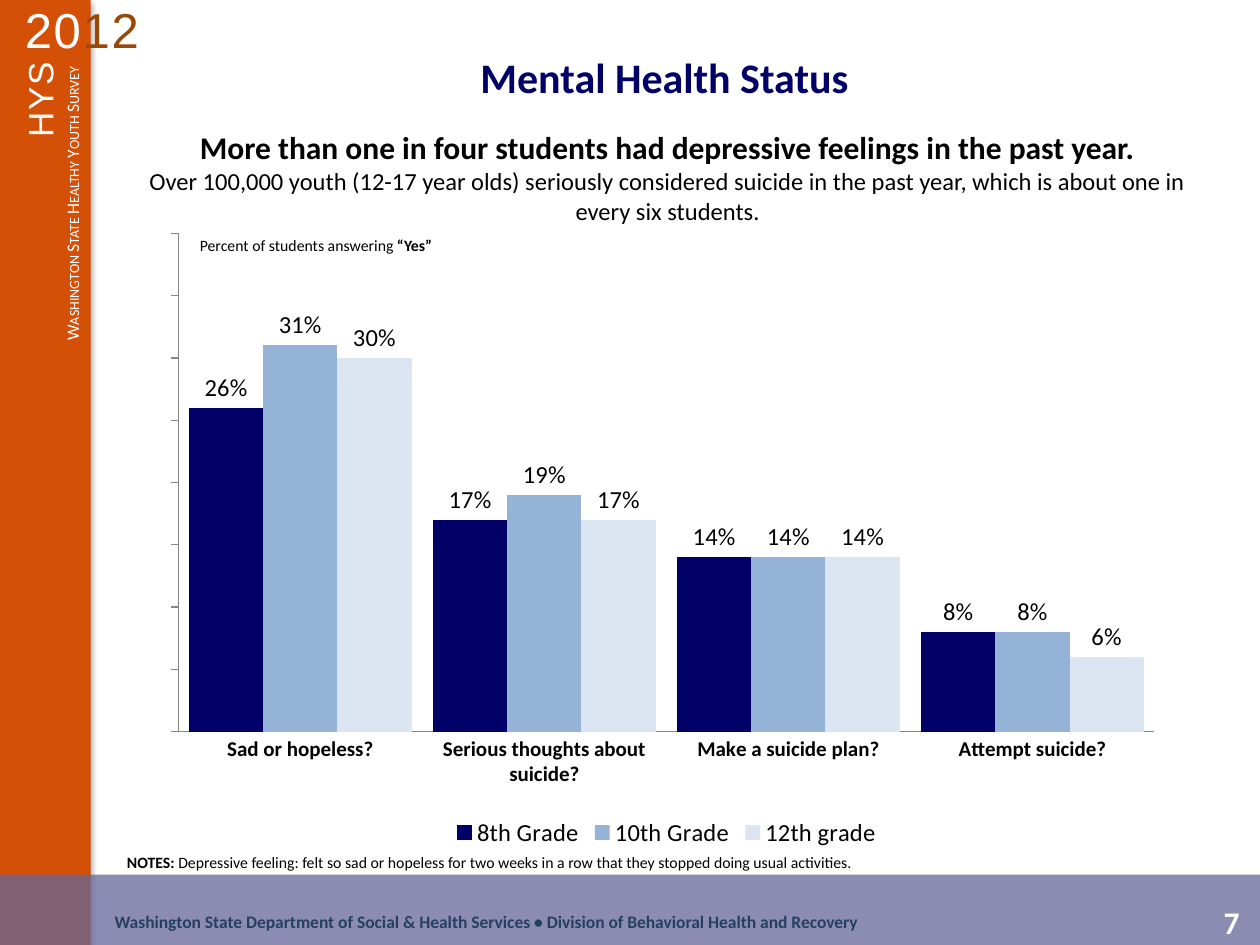
from lxml import etree
from pptx import Presentation, util as u
from pptx.chart import data as cd
from pptx.dml import color as col
from pptx.enum import chart as ch, shapes, text
from pptx.oxml import parse_xml
from pptx.oxml.ns import nsdecls, qn

NAVY, WHITE, BLACK, GREY = "000066", "FFFFFF", "000000", "868686"
LEFT, MID, RIGHT = text.PP_ALIGN.LEFT, text.PP_ALIGN.CENTER, text.PP_ALIGN.RIGHT


def rgb(code):
    return col.RGBColor.from_string(code)


def paint(fill, code):
    fill.solid()
    fill.fore_color.rgb = rgb(code)


class Deck:
    """Holds the text style and the slide being filled."""

    def __init__(self, slide, face="Calibri"):
        self.slide = slide
        self.face = face

    def place(self, shape, box):
        shape.left, shape.top, shape.width, shape.height = map(u.Cm, box)

    def font(self, font, size, code=BLACK, bold=None, face=None):
        font.name, font.size = face or self.face, u.Pt(size)
        font.color.rgb = rgb(code)
        font.bold = bold

    def band(self, box, code):
        band = self.slide.shapes.add_shape(
            shapes.MSO_SHAPE.RECTANGLE, *map(u.Cm, box))
        band.shadow.inherit = False
        paint(band.fill, code)
        band.line.fill.background()
        return band

    def line(self, para, runs, size, code=BLACK, bold=None, face=None,
             align=LEFT, attrs=None):
        """Fill a paragraph; each run is a text and its own font settings."""
        para.alignment = align
        para.space_before = u.Pt(0)
        self.font(para.font, size, code, bold, face)
        for words, own in runs:
            run = para.add_run()
            run.text = words
            if "bold" in own:
                run.font.bold = own["bold"]
            if "code" in own:
                run.font.color.rgb = rgb(own["code"])
            for key, value in (attrs or {}).items():
                run._r.get_or_add_rPr().set(key, value)

    def label(self, box, runs, size, turn=0, **style):
        note = self.slide.shapes.add_textbox(*map(u.Cm, box))
        note.rotation = turn
        note.text_frame.word_wrap = True
        self.line(note.text_frame.paragraphs[0], runs, size, **style)

    def holder(self, index, box, lines):
        """Move a placeholder and fill it with plain centred lines."""
        shape = self.slide.placeholders[index]
        self.place(shape, box)
        frame = shape.text_frame
        frame.auto_size = text.MSO_AUTO_SIZE.NONE
        frame.vertical_anchor = text.MSO_ANCHOR.TOP
        for i, (words, size, code, bold) in enumerate(lines):
            para = frame.add_paragraph() if i else frame.paragraphs[0]
            props = para._p.get_or_add_pPr()
            props.set("marL", "0")
            props.set("indent", "0")
            etree.SubElement(props, qn("a:buNone"))
            self.line(para, [(words, {})], size, code, bold, align=MID)

    def chart(self, box, cats, rows, plot):
        data = cd.CategoryChartData(number_format="0%")
        data.categories = cats
        for name, _, values in rows:
            data.add_series(name, values)
        chart = self.slide.shapes.add_chart(
            ch.XL_CHART_TYPE.COLUMN_CLUSTERED, *map(u.Cm, box), data).chart
        self.font(chart.font, 18)
        chart.has_title = False
        chart.has_legend = True
        chart.legend.position = ch.XL_LEGEND_POSITION.BOTTOM
        chart.legend.include_in_layout = False
        self.font(chart.legend.font, 14)
        self.axes(chart)
        bars = chart.plots[0]
        bars.gap_width, bars.overlap = 29, 0
        bars.vary_by_categories = False
        for series, (_, code, _) in zip(bars.series, rows):
            paint(series.format.fill, code)
            tags = series.data_labels
            tags.show_value = True
            tags.number_format, tags.number_format_is_linked = "0%", False
            tags.position = ch.XL_LABEL_POSITION.OUTSIDE_END
            self.font(tags.font, 14)
        self.frame(chart, plot)

    def axes(self, chart):
        cat, val = chart.category_axis, chart.value_axis
        cat.major_tick_mark = ch.XL_TICK_MARK.NONE
        self.font(cat.tick_labels.font, 12, bold=True)
        val.minimum_scale, val.maximum_scale, val.major_unit = 0, 0.4, 0.05
        val.has_major_gridlines = False
        val.major_tick_mark = ch.XL_TICK_MARK.OUTSIDE
        val.tick_label_position = ch.XL_TICK_LABEL_POSITION.NONE
        for axis in (cat, val):
            axis.format.line.color.rgb = rgb(GREY)
            axis.format.line.width = u.Pt(0.75)

    def frame(self, chart, plot):
        """Fix the inner plot area, in fractions of the chart."""
        area = chart._chartSpace.chart.plotArea
        for old in area.findall(qn("c:layout")):
            area.remove(old)
        parts = [("layoutTarget", "inner"), ("xMode", "edge"),
                 ("yMode", "edge"), *zip("xywh", plot)]
        inner = "".join(f'<c:{tag} val="{value}"/>' for tag, value in parts)
        area.insert(0, parse_xml(
            f'<c:layout {nsdecls("c")}><c:manualLayout>{inner}'
            '</c:manualLayout></c:layout>'))


def shade(shape):
    """Give a shape a soft shadow below it."""
    effects = shape._element.spPr.find(qn("a:effectLst"))
    effects.append(parse_xml(
        f'<a:outerShdw {nsdecls("a")} blurRad="{u.Pt(3.1)}" '
        f'dist="{u.Pt(1.8)}" dir="5400000" rotWithShape="0">'
        '<a:srgbClr val="000000"><a:alpha val="35000"/></a:srgbClr>'
        '</a:outerShdw>'))


def fade(shape, share):
    tint = shape._element.spPr.find(qn("a:solidFill"))[0]
    etree.SubElement(tint, qn("a:alpha")).set("val", str(share * 1000))


def main():
    prs = Presentation()
    prs.slide_width, prs.slide_height = u.Cm(25.4), u.Cm(19.05)
    deck = Deck(prs.slides.add_slide(prs.slide_layouts[1]))

    shade(deck.band((0, 0, 1.83, 19.05), "D55007"))
    fade(deck.band((0, 17.63, 25.4, 1.42), "666699"), 75)
    deck.label((23.98, 18.08, 1.7, 1.02), [("7", {})], 18,
               code=WHITE, bold=True, align=MID)
    deck.label((2.06, 18.24, 23.2, 0.65),
               [("Washington State Department of Social & Health Services • "
                 "Division of Behavioral Health and Recovery", {})], 10,
               code="254061", bold=True)
    wide = {"spc": "100"}
    deck.label((0.25, -0.13, 3.5, 1.45),
               [("20", {}), ("12", {"code": "984807"})], 28,
               code=WHITE, face="Arial", attrs=wide)
    deck.label((-2.41, 4.62, 7.75, 0.69),
               [("Washington State Healthy Youth Survey", {})], 10, turn=270,
               code=WHITE, align=RIGHT, attrs={"cap": "small"})
    deck.label((-2.46, 3.71, 6.53, 1.12), [("HYS", {})], 20, turn=270,
               code=WHITE, face="Arial", align=RIGHT, attrs=wide)

    deck.chart((2.74, 2.84, 21.39, 14.35),
               ["Sad or hopeless?", "Serious thoughts about suicide?",
                "Make a suicide plan?", "Attempt suicide?"],
               [("8th Grade", NAVY, (0.26, 0.17, 0.14, 0.08)),
                ("10th Grade", "95B3D7", (0.31, 0.19, 0.14, 0.08)),
                ("12th grade", "DCE6F2", (0.30, 0.17, 0.14, 0.06))],
               (0.04, 0.13, 0.92, 0.7))

    deck.holder(0, (2.36, 0.91, 22.07, 1.27),
                [("Mental Health Status", 24, NAVY, True)])
    deck.holder(1, (2.46, 2.46, 22, 2.82), [
        ("More than one in four students had depressive feelings "
         "in the past year.", 18, BLACK, True),
        ("Over 100,000 youth (12-17 year olds) seriously considered suicide "
         "in the past year, which is about one in every six students.",
         14, BLACK, False)])
    deck.label((2.31, 17.07, 22, 0.64),
               [("NOTES: ", {"bold": True}),
                ("Depressive feeling: felt so sad or hopeless for two weeks "
                 "in a row that they stopped doing usual activities.", {})], 9)
    deck.label((3.78, 4.62, 11.99, 0.64),
               [("Percent of students answering ", {}),
                ("“Yes”", {"bold": True})], 9)
    prs.save("out.pptx")


if __name__ == "__main__":
    main()
